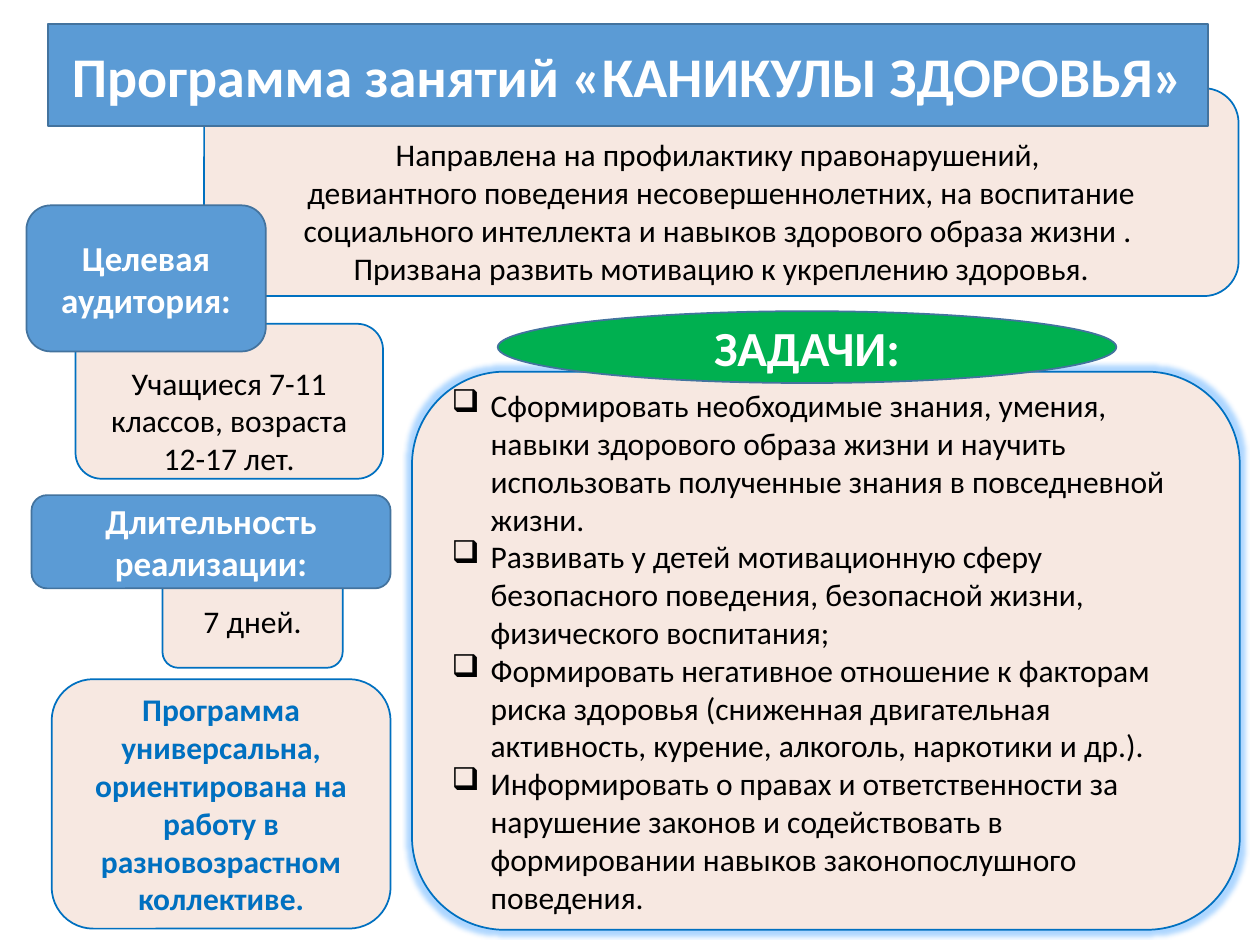
from lxml import etree
from pptx import Presentation, util as u
from pptx.dml.color import RGBColor
from pptx.enum import shapes, text
from pptx.oxml import ns

KIND = shapes.MSO_SHAPE
BLUE, NAVY, GREEN = "5B9BD5", "43739E", "00B050"
CREAM, EDGE, WHITE, BLACK = "F7E8E1", "0070C0", "FFFFFF", "000000"
PLAIN = {"size": u.Pt(18), "bold": False, "name": "Calibri"}
HEAD = {"size": u.Pt(20), "bold": True, "name": "Calibri"}


def color(code):
    return RGBColor.from_string(code)


def child(node, tag, **attrs):
    return etree.SubElement(node, ns.qn(tag), attrs)


class Page:
    def __init__(self, deck):
        self.slide = deck.slides.add_slide(deck.slide_layouts[5])

    def paint(self, shape, fill, line):
        shape.fill.solid()
        shape.fill.fore_color.rgb = color(fill)
        shape.line.color.rgb = color(line)
        shape.line.width = u.Pt(1)

    def letter(self, shape, lines, style, ink, top=0.05, mark=None):
        frame = shape.text_frame
        form = {
            "word_wrap": True,
            "auto_size": text.MSO_AUTO_SIZE.NONE,
            "vertical_anchor": text.MSO_ANCHOR.MIDDLE,
            "margin_top": u.Inches(top),
        }
        for key, value in form.items():
            setattr(frame, key, value)
        for i, line in enumerate(lines):
            para = frame.add_paragraph() if i else frame.paragraphs[0]
            para.text = line
            para.alignment = text.PP_ALIGN.LEFT if mark else text.PP_ALIGN.CENTER
            if mark:
                props = para._p.get_or_add_pPr()
                gap = u.Inches(0.31)
                props.set("marL", str(gap))
                props.set("indent", str(-gap))
                child(props, "a:buChar", char=mark)
            for run in para.runs:
                for key, value in style.items():
                    setattr(run.font, key, value)
                run.font.color.rgb = color(ink)

    def block(self, kind, box, fill, line):
        shape = self.slide.shapes.add_shape(kind, *map(u.Inches, box))
        shape.shadow.inherit = False
        self.paint(shape, fill, line)
        return shape

    def panel(self, box, lines, style=PLAIN, ink=BLACK, **extra):
        shape = self.block(KIND.ROUNDED_RECTANGLE, box, CREAM, EDGE)
        self.letter(shape, lines, style, ink, **extra)
        return shape

    def label(self, box, line):
        shape = self.block(KIND.FLOWCHART_ALTERNATE_PROCESS, box, BLUE, NAVY)
        self.letter(shape, [line], HEAD, WHITE)

    def oval(self, box, line):
        shape = self.block(KIND.OVAL, box, GREEN, NAVY)
        self.letter(shape, [line], {**HEAD, "size": u.Pt(28)}, WHITE)

    def title(self, box, line):
        shape = self.slide.shapes.title
        for key, value in zip(("left", "top", "width", "height"), box):
            setattr(shape, key, u.Inches(value))
        geom = child(shape._element.spPr, "a:prstGeom", prst="flowChartAlternateProcess")
        child(geom, "a:avLst")
        self.paint(shape, BLUE, NAVY)
        self.letter(shape, [line], {**HEAD, "size": u.Pt(32)}, WHITE)
        self.slide.shapes._spTree.append(shape._element)

    def glow(self, shape):
        effects = shape._element.spPr.find(ns.qn("a:effectLst"))
        halo = child(effects, "a:glow", rad=str(u.Pt(5)))
        tint = child(halo, "a:srgbClr", val="3399FF")
        child(tint, "a:alpha", val="40000")


def main():
    deck = Presentation()
    deck.slide_width, deck.slide_height = u.Inches(10), u.Inches(7.5)
    page = Page(deck)
    page.panel((1.62, 0.7, 8.21, 1.65), [
        "Направлена на профилактику правонарушений, \nдевиантного поведения "
        "несовершеннолетних, на воспитание социального интеллекта и навыков "
        "здорового образа жизни . ",
        "Призвана развить мотивацию к укреплению здоровья.",
    ], top=0.35)
    page.title((0.38, 0.19, 9.21, 0.81), "Программа занятий «КАНИКУЛЫ ЗДОРОВЬЯ»")
    tasks = page.panel((3.27, 2.95, 6.57, 4.43), [
        "Сформировать необходимые знания, умения, навыки здорового образа жизни "
        "и научить использовать полученные знания в повседневной жизни.",
        "Развивать у детей мотивационную сферу безопасного поведения, "
        "безопасной жизни, физического воспитания;",
        "Формировать негативное отношение к факторам риска здоровья (сниженная "
        "двигательная активность, курение, алкоголь, наркотики и др.).",
        "Информировать о правах и ответственности за нарушение законов и "
        "содействовать в формировании навыков законопослушного поведения.",
    ], mark="❑")
    page.glow(tasks)
    page.panel((0.6, 2.57, 2.44, 1.23),
               ["Учащиеся 7-11 классов, возраста 12-17 лет."], top=0.35)
    page.label((0.21, 1.63, 1.9, 1.16), "Целевая аудитория:")
    page.panel((1.29, 4.55, 1.43, 0.75), ["7 дней."])
    page.label((0.25, 3.93, 2.85, 0.74), "Длительность реализации:")
    page.panel((0.41, 5.39, 2.69, 1.98), [
        "Программа универсальна, ориентирована на работу в разновозрастном "
        "коллективе.",
    ], {**PLAIN, "bold": True}, EDGE)
    page.oval((3.95, 2.47, 4.91, 0.57), "ЗАДАЧИ:")
    deck.save("out.pptx")


if __name__ == "__main__":
    main()
